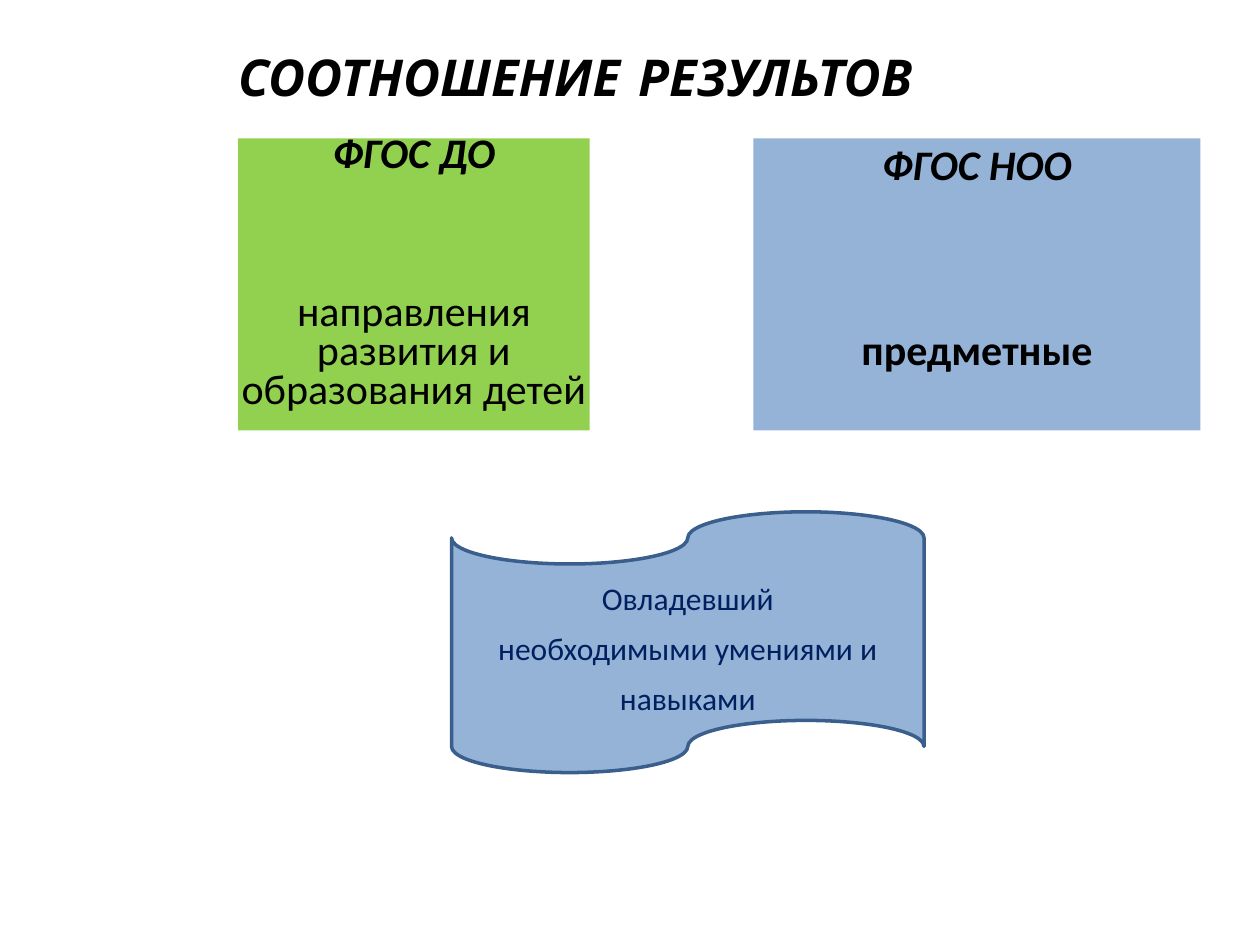
import pptx
import pptx.util
import pptx.dml.color
import pptx.enum.shapes
import pptx.enum.text

Pt = pptx.util.Pt
RGBColor = pptx.dml.color.RGBColor
Shape = pptx.enum.shapes.MSO_SHAPE
Anchor = pptx.enum.text.MSO_ANCHOR
Align = pptx.enum.text.PP_ALIGN

BLACK = RGBColor(0x00, 0x00, 0x00)
NAVY = RGBColor(0x00, 0x20, 0x60)
BLUE = RGBColor(0x95, 0xB3, 0xD7)
GREEN = RGBColor(0x92, 0xD0, 0x50)
OUTLINE = RGBColor(0x3A, 0x5F, 0x8C)


def write(paragraph, text, size=24, font="Calibri", color=BLACK, bold=False,
          italic=False, align=Align.CENTER, line=None, after=0):
    run = paragraph.add_run()
    run.text = text
    run.font.size = Pt(size)
    run.font.name = font
    run.font.color.rgb = color
    run.font.bold = bold
    run.font.italic = italic
    paragraph.alignment = align
    paragraph.space_after = Pt(after)
    if line:
        paragraph.line_spacing = Pt(line)


deck = pptx.Presentation()
deck.slide_width = Pt(720)
deck.slide_height = Pt(540)
slide = deck.slides.add_slide(deck.slide_layouts[6])

title = slide.shapes.add_textbox(Pt(136), Pt(26), Pt(400), Pt(40)).text_frame
title.word_wrap = True
title.margin_left = title.margin_right = title.margin_top = title.margin_bottom = 0
write(title.paragraphs[0], "СООТНОШЕНИЕ РЕЗУЛЬТОВ", size=29, font="Comic Neue",
      bold=True, italic=True, align=Align.LEFT)

standards = [
    (430.5, 255.5, BLUE, "ФГОС НОО", "предметные", True, None, 77),
    (136, 201, GREEN, "ФГОС ДО", "направления развития и образования детей", False, 22.1, 68.3),
]
for left, width, fill, heading, result, bold, line, gap in standards:
    standard = slide.shapes.add_shape(Shape.RECTANGLE, Pt(left), Pt(79), Pt(width), Pt(167))
    standard.shadow.inherit = False
    standard.fill.solid()
    standard.fill.fore_color.rgb = fill
    standard.line.fill.background()
    content = standard.text_frame
    content.word_wrap = True
    content.vertical_anchor = Anchor.TOP
    content.margin_left = content.margin_right = content.margin_top = content.margin_bottom = 0
    write(content.paragraphs[0], heading, bold=True, italic=True, line=line, after=gap)
    write(content.add_paragraph(), result, bold=bold, line=line)

graduate = slide.shapes.add_shape(Shape.FLOWCHART_PUNCHED_TAPE,
                                  Pt(258), Pt(292.5), Pt(270), Pt(149))
graduate.shadow.inherit = False
graduate.fill.solid()
graduate.fill.fore_color.rgb = BLUE
graduate.line.color.rgb = OUTLINE
graduate.line.width = Pt(2)
skills = graduate.text_frame
skills.word_wrap = True
skills.vertical_anchor = Anchor.MIDDLE
for phrase, paragraph in [
    ("Овладевший", skills.paragraphs[0]),
    ("необходимыми умениями и навыками", skills.add_paragraph()),
]:
    write(paragraph, phrase, size=18, color=NAVY, line=28.6)

deck.save("out.pptx")
